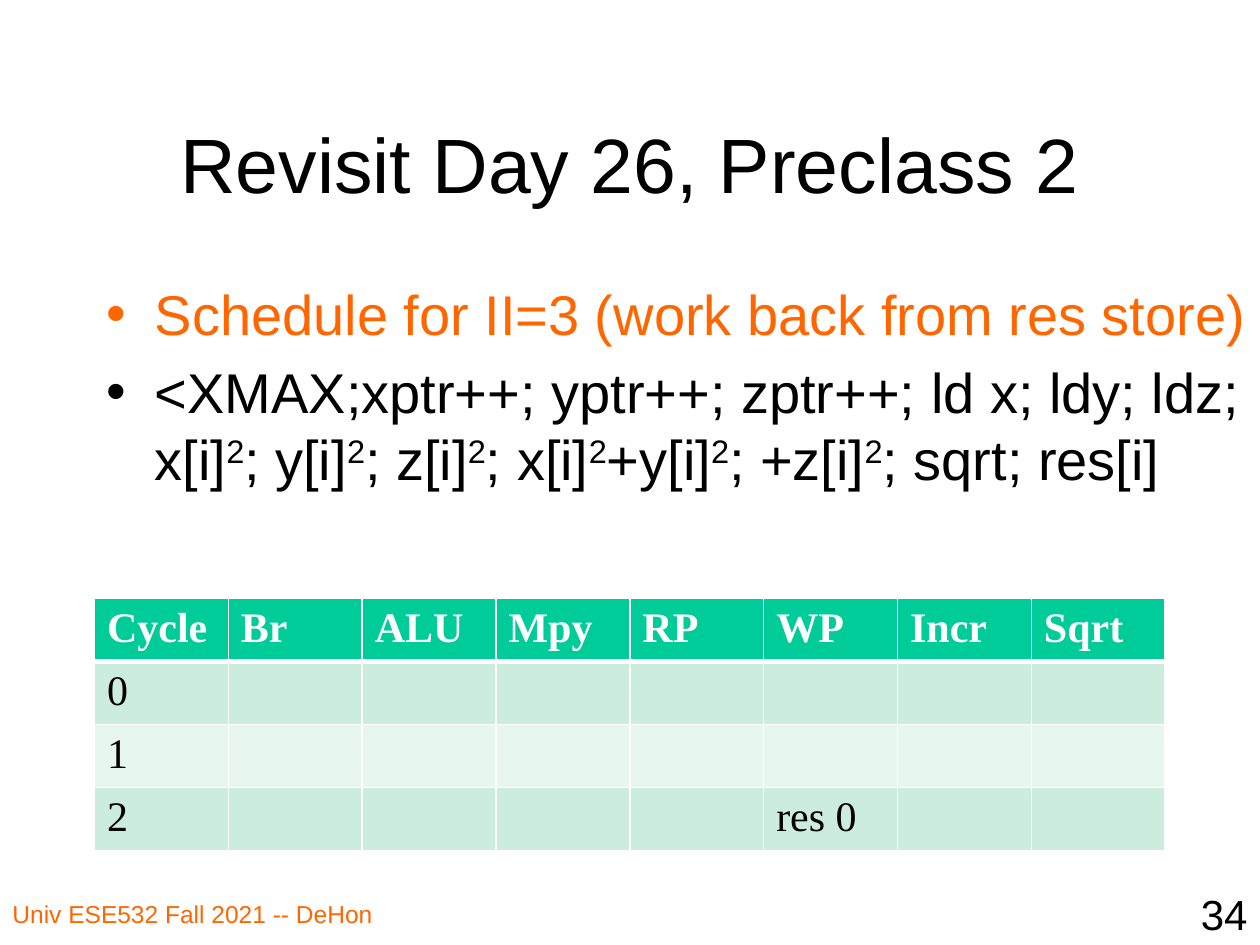
from lxml.etree import SubElement
from pptx import Presentation
from pptx.dml.color import RGBColor
from pptx.enum.text import MSO_ANCHOR, PP_ALIGN
from pptx.oxml.ns import qn
from pptx.util import Inches, Pt

COLORS = {"ink": "000000", "accent": "FF6600", "white": "FFFFFF",
          "header": "00CC99", "band": "CCECDE", "light": "E7F6EF"}
COLS, ROWS = 120, 90  # layout grid


def rgb(name):
    return RGBColor.from_string(COLORS[name])


class Deck:
    font, table_font = "Arial", "Times New Roman"

    def __init__(self):
        self.prs = Presentation()
        self.prs.slide_width, self.prs.slide_height = Inches(10), Inches(7.5)
        self.s = self.prs.slides.add_slide(self.prs.slide_layouts[5])

    def box(self, col, row, cols, rows):
        dx, dy = self.prs.slide_width / COLS, self.prs.slide_height / ROWS
        return [round(v) for v in (col * dx, row * dy, cols * dx, rows * dy)]

    def run(self, p, text, size, color, font=None, bold=False, raised=False):
        r = p.add_run()
        r.text = text
        r.font.size, r.font.name, r.font.bold = Pt(size), font or self.font, bold
        r.font.color.rgb = rgb(color)
        if raised:
            r.font._element.set("baseline", "30000")

    def title(self, text, *grid):
        sp = self.s.shapes.title
        sp.left, sp.top, sp.width, sp.height = self.box(*grid)
        tf = sp.text_frame
        tf.vertical_anchor = MSO_ANCHOR.MIDDLE
        p = tf.paragraphs[0]
        p.alignment = PP_ALIGN.CENTER
        self.run(p, text, 44, "ink")

    def text_frame(self, *grid):
        tf = self.s.shapes.add_textbox(*self.box(*grid)).text_frame
        tf.word_wrap = True
        return tf

    def label(self, text, size, color, align, *grid):
        p = self.text_frame(*grid).paragraphs[0]
        p.alignment = align
        self.run(p, text, size, color)

    def bullets(self, items, size, *grid):
        """Each item is (colour, text); '^' in the text marks a raised 2."""
        tf = self.text_frame(*grid)
        for i, (color, text) in enumerate(items):
            p = tf.add_paragraph() if i else tf.paragraphs[0]
            p.space_before = Pt(size * 0.2)
            pPr = p._p.get_or_add_pPr()
            pPr.set("marL", str(Inches(0.38)))
            pPr.set("indent", str(-Inches(0.38)))
            SubElement(pPr, qn("a:buFont"), typeface=self.font)
            SubElement(pPr, qn("a:buChar"), char="•")
            for j, part in enumerate(text.split("^")):
                if j:
                    self.run(p, "2", size, color, raised=True)
                self.run(p, part, size, color)

    def border(self, cell, header_rule):
        tcPr = cell._tc.get_or_add_tcPr()
        for side in "LRTB":
            width = Pt(3 if side == header_rule else 1)
            ln = SubElement(tcPr, qn(f"a:ln{side}"), w=str(width))
            fill = SubElement(ln, qn("a:solidFill"))
            SubElement(fill, qn("a:srgbClr"), val=COLORS["white"])

    def table(self, rows, size, *grid):
        shape = self.s.shapes.add_table(len(rows), len(rows[0]), *self.box(*grid))
        for i, row in enumerate(rows):
            head = i == 0
            fill = "header" if head else "band" if i % 2 else "light"
            for j, text in enumerate(row):
                cell = shape.table.cell(i, j)
                self.border(cell, {0: "B", 1: "T"}.get(i))
                cell.fill.solid()
                cell.fill.fore_color.rgb = rgb(fill)
                if text:
                    self.run(cell.text_frame.paragraphs[0], text, size,
                             "white" if head else "ink", self.table_font, head)


def main():
    deck = Deck()

    # Title and task
    deck.title("Revisit Day 26, Preclass 2", 9, 8, 102, 15)
    deck.bullets([
        ("accent", "Schedule for II=3 (work back from res store)"),
        ("ink", "<XMAX;xptr++; yptr++; zptr++; ld x; ldy; ldz; "
                "x[i]^; y[i]^; z[i]^; x[i]^+y[i]^; +z[i]^; sqrt; res[i]"),
    ], 32, 9, 26, 111, 54)

    # Schedule: one row per cycle, one column per resource
    header = ["Cycle", "Br", "ALU", "Mpy", "RP", "WP", "Incr", "Sqrt"]
    scheduled = {(2, "WP"): "res 0"}
    cycles = [[str(c)] + [scheduled.get((c, unit), "") for unit in header[1:]]
              for c in range(3)]
    deck.table([header] + cycles, 24, 9, 57, 102, 19.5)

    # Footer
    deck.label("Univ ESE532 Fall 2021 -- DeHon", 14, "accent", PP_ALIGN.LEFT,
               0, 85, 46, 5)
    deck.label("34", 24, "ink", PP_ALIGN.RIGHT, 95, 84, 25, 6)

    deck.prs.save("out.pptx")


if __name__ == "__main__":
    main()
